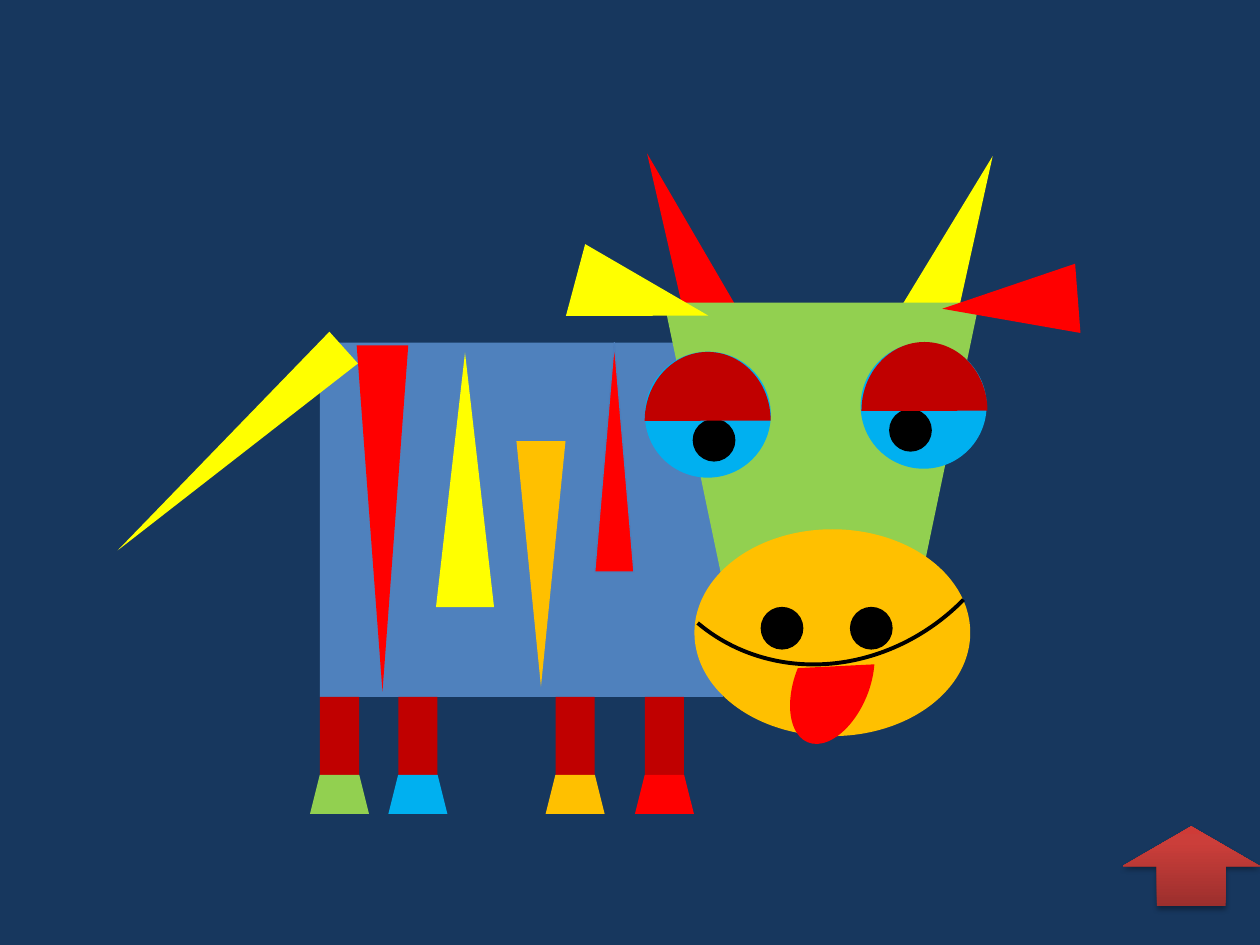
from copy import deepcopy

from pptx import Presentation
from pptx import util as u
from pptx.dml.color import RGBColor
from pptx.enum import shapes
from pptx.oxml import parse_xml
from pptx.oxml.ns import nsdecls, qn

KIND = shapes.MSO_SHAPE
TRIANGLE, OVAL, RECT = KIND.ISOSCELES_TRIANGLE, KIND.OVAL, KIND.RECTANGLE

COLORS = {
    "night": "17375E", "blue": "4F81BD", "edge": "4B7EBC", "sky": "00B0F0",
    "yellow": "FFFF00", "orange": "FFC000", "red": "FF0000",
    "maroon": "C00000", "green": "92D050", "black": "000000",
}
ARROW_STOPS = [(0, "9C2F2D"), (0.8, "CB3E3A"), (1, "CE3B37")]

# Boxes are left, top, width, height in centimetres.
SLIDE = (25.4, 19.05)
BODY = (6.45, 6.91, 8.13, 7.14)
LEG, HOOF = (0.79, 1.57), (1.19, 0.79)
LEGS = [(6.45, "green"), (8.03, "sky"), (11.2, "orange"), (13, "red")]
EYE, LID, DOT = 2.54, (2.77, 2.54), 0.79
HALF_CIRCLE = (53.857, 162)
SMILE_SWEEP = (162, 213.885)
BLACK_LINE = ("black", 2)

# kind, box, fill, further settings
HORNS_AND_BODY = [
    (TRIANGLE, (18.77, 3.02, 1.17, 3.53), "yellow", dict(turn=21.9, flip=True)),
    (TRIANGLE, (13.16, 2.97, 1.07, 3.53), "red", dict(turn=338.4)),
    (RECT, BODY, "blue", {}),
]
TAIL_AND_HEAD = [
    (TRIANGLE, (4.22, 5.99, 0.86, 6.12), "yellow", dict(turn=228.1)),
    (KIND.FLOWCHART_MANUAL_OPERATION, (13.39, 6.1, 6.35, 6.07), "green", {}),
    (OVAL, (14, 10.67, 5.56, 4.17), "orange", {}),
    (TRIANGLE, (12.19, 4.62, 1.5, 2.77), "yellow", dict(turn=105)),
    (TRIANGLE, (19.66, 4.75, 1.4, 2.74), "red", dict(turn=265.6, flip=True)),
]
FACE = [
    (OVAL, (13, 7.09, EYE, EYE), "sky", {}),
    (KIND.CHORD, (15.47, 13, 2.62, 1.5), "red", dict(turn=292.1)),
    (OVAL, (15.37, 12.27, DOT, DOT), "black", dict(line=BLACK_LINE)),
    (OVAL, (17.17, 12.27, DOT, DOT), "black", dict(line=BLACK_LINE)),
    (OVAL, (17.35, 6.91, EYE, EYE), "sky", {}),
    (OVAL, (14, 8.48, DOT, DOT), "black", dict(line=BLACK_LINE)),
    (OVAL, (17.96, 8.28, DOT, DOT), "black", dict(line=BLACK_LINE)),
    (KIND.CHORD, (12.88, 7.21, *LID), "maroon", dict(turn=90, adjust=HALF_CIRCLE)),
    (KIND.CHORD, (17.25, 7.01, *LID), "maroon", dict(turn=90, adjust=HALF_CIRCLE)),
]
STRIPES_AND_SMILE = [
    (TRIANGLE, (7.19, 6.96, 1.04, 6.98), "red", dict(turn=180)),
    (TRIANGLE, (8.79, 7.11, 1.17, 5.13), "yellow", {}),
    (TRIANGLE, (10.41, 8.89, 0.99, 4.95), "orange", dict(turn=180)),
    (TRIANGLE, (11.99, 6.91, 0.79, 4.62), "red", dict(line=("edge", 0.75))),
    (KIND.ARC, (12.65, 5.72, 8.2, 7.49), None,
     dict(turn=134.5, adjust=SMILE_SWEEP, line=("black", 2.25))),
]


def rgb(name):
    return RGBColor.from_string(COLORS[name])


def add_part(parent, kind, box, fill, turn=0, flip=False, adjust=(), line=None):
    part = parent.add_shape(kind, *(u.Cm(length) for length in box))
    part.shadow.inherit = False
    part.rotation = turn
    if flip:
        part._element.spPr.xfrm.set("flipH", "1")
    for index, value in enumerate(adjust):
        part.adjustments[index] = value
    if fill:
        part.fill.solid()
        part.fill.fore_color.rgb = rgb(fill)
    else:
        part.fill.background()
    if line:
        part.line.color.rgb = rgb(line[0])
        part.line.width = u.Pt(line[1])
    else:
        part.line.fill.background()
    return part


def add_shadow(part):
    effects = part._element.spPr.find(qn("a:effectLst"))
    effects.append(parse_xml(
        f'<a:outerShdw {nsdecls("a")} blurRad="{u.Pt(3.1)}" dist="{u.Pt(1.8)}" '
        f'dir="5400000" rotWithShape="0"><a:srgbClr val="{COLORS["black"]}">'
        '<a:alpha val="35000"/></a:srgbClr></a:outerShdw>'))


def shade_upwards(part, stops):
    part.fill.gradient()
    part.fill.gradient_angle = 90
    stop_list = part._element.spPr.find(qn("a:gradFill")).find(qn("a:gsLst"))
    while len(stop_list) < len(stops):
        stop_list.append(deepcopy(stop_list[-1]))
    for stop, (position, color) in zip(part.fill.gradient_stops, stops):
        stop.position = position
        stop.color.rgb = RGBColor.from_string(color)


def leg_parts():
    """All legs first, then a hoof centred under each."""
    leg_top = BODY[1] + BODY[3]
    hoof_top = leg_top + LEG[1]
    overhang = (HOOF[0] - LEG[0]) / 2
    legs = [(RECT, (x, leg_top, *LEG), "maroon", {}) for x, _ in LEGS]
    hooves = [(KIND.TRAPEZOID, (x - overhang, hoof_top, *HOOF), color, {})
              for x, color in LEGS]
    return legs + hooves


def main():
    deck = Presentation()
    deck.slide_width, deck.slide_height = (u.Cm(side) for side in SLIDE)
    slide = deck.slides.add_slide(deck.slide_layouts[6])

    add_shadow(add_part(slide.shapes, RECT, (0, 0, *SLIDE), "night"))

    cow = slide.shapes.add_group_shape()
    for kind, box, fill, settings in (HORNS_AND_BODY + leg_parts() + TAIL_AND_HEAD
                                      + FACE + STRIPES_AND_SMILE):
        add_part(cow.shapes, kind, box, fill, **settings)

    arrow = add_part(slide.shapes, KIND.UP_ARROW, (22.63, 16.66, 2.77, 1.6), "red")
    shade_upwards(arrow, ARROW_STOPS)
    add_shadow(arrow)

    deck.save("out.pptx")


if __name__ == "__main__":
    main()
